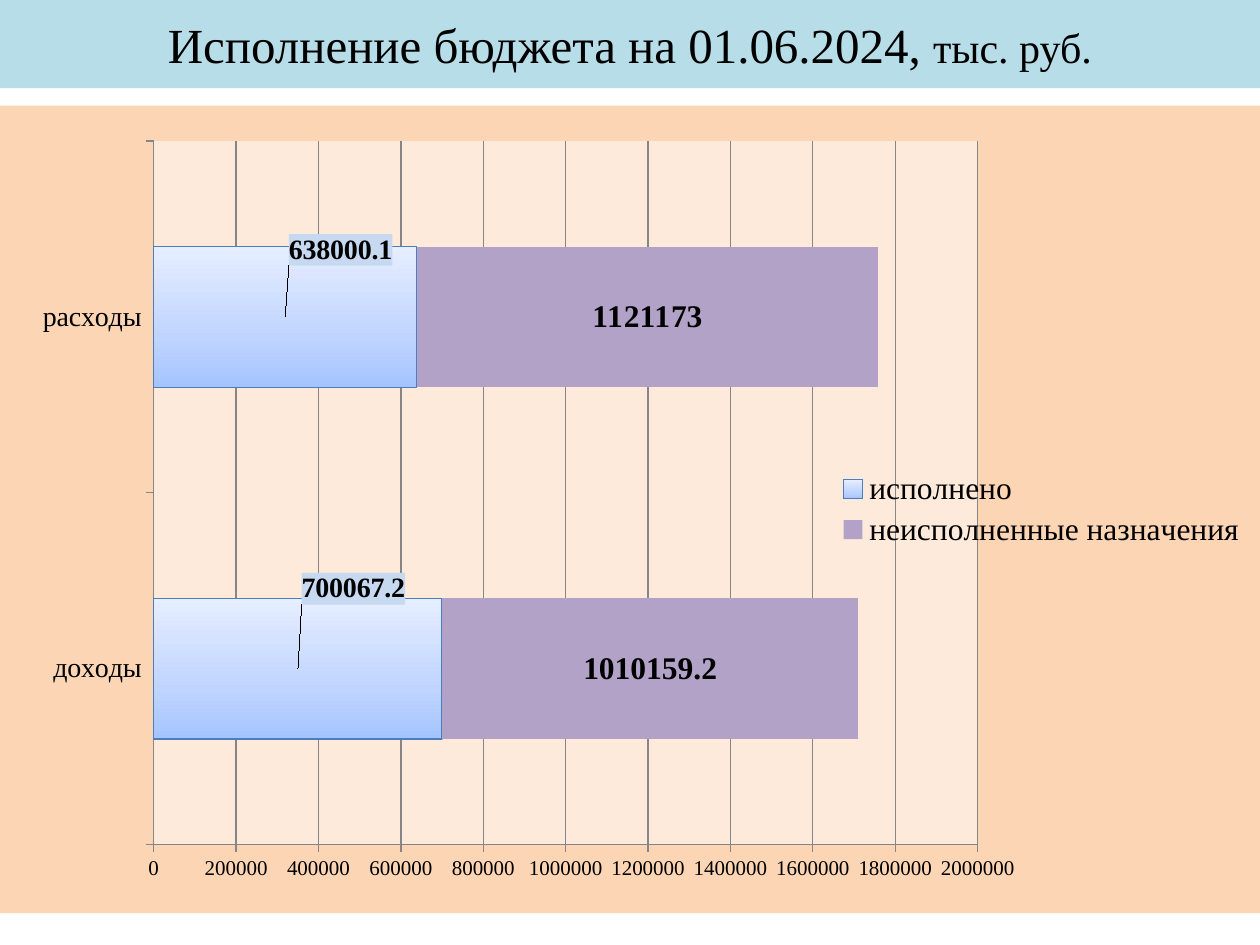
from lxml.etree import SubElement
from pptx import Presentation
from pptx.chart.data import CategoryChartData
from pptx.dml.color import RGBColor
from pptx.enum.chart import XL_CHART_TYPE, XL_LEGEND_POSITION, XL_TICK_MARK
from pptx.enum.shapes import MSO_SHAPE
from pptx.enum.text import MSO_ANCHOR, PP_ALIGN
from pptx.oxml import parse_xml
from pptx.oxml.ns import nsdecls, qn
from pptx.util import Cm, Pt

FONT = "Times New Roman"
TITLE = [("Исполнение бюджета на 01.06.2024, ", 28), ("тыс. руб.", 24)]
CATEGORIES = ["доходы", "расходы"]
SERIES = {
    "исполнено": [700067.2, 638000.1],
    "неисполненные назначения": [1010159.2, 1121173],
}
LABEL_SIZES = [16, 18]
LABEL_OFFSETS = [(0.044, -0.099), (0.044, -0.083)]
GRADIENT = [(0, "A4C4FF"), (35, "BFD4FF"), (100, "E6EEFF")]
PLOT_LAYOUT = {"x": 0.122, "y": 0.044, "w": 0.654, "h": 0.871}


def color(value):
    return RGBColor.from_string(value)


def set_font(font, size, bold=False):
    font.name = FONT
    font.size = Pt(size)
    font.bold = bold
    font.color.rgb = color("000000")


def solid_properties(value):
    return parse_xml(
        f'<c:spPr {nsdecls("c", "a")}><a:solidFill><a:srgbClr val="{value}"/>'
        "</a:solidFill><a:ln><a:noFill/></a:ln></c:spPr>"
    )


def manual_layout(settings):
    layout = parse_xml(f'<c:layout {nsdecls("c")}><c:manualLayout/></c:layout>')
    for name, value in settings.items():
        SubElement(layout[0], qn(f"c:{name}")).set("val", str(value))
    return layout


def gradient_fill(stops, angle):
    stop_list = "".join(
        f'<a:gs pos="{position * 1000}"><a:srgbClr val="{value}"/></a:gs>'
        for position, value in stops
    )
    return parse_xml(
        f'<a:gradFill {nsdecls("a")}><a:gsLst>{stop_list}</a:gsLst>'
        f'<a:lin ang="{angle * 60000}" scaled="0"/></a:gradFill>'
    )


def add_title(slide):
    shape = slide.shapes.add_shape(MSO_SHAPE.RECTANGLE, 0, 0, Cm(25.4), Cm(1.78))
    shape.shadow.inherit = False
    shape.fill.solid()
    shape.fill.fore_color.rgb = color("B7DEE8")
    shape.line.fill.background()
    shape.text_frame.word_wrap = True
    shape.text_frame.vertical_anchor = MSO_ANCHOR.MIDDLE
    paragraph = shape.text_frame.paragraphs[0]
    paragraph.alignment = PP_ALIGN.CENTER
    for text, size in TITLE:
        run = paragraph.add_run()
        run.text = text
        set_font(run.font, size)


def style_axes(chart):
    for axis, size in ((chart.category_axis, 16), (chart.value_axis, 12)):
        set_font(axis.tick_labels.font, size)
        axis.major_tick_mark = XL_TICK_MARK.OUTSIDE
        axis.minor_tick_mark = XL_TICK_MARK.NONE
        axis.format.line.color.rgb = color("868686")
    axis = chart.value_axis
    axis.minimum_scale, axis.maximum_scale = 0, 2000000
    axis.major_unit = 200000
    axis.has_major_gridlines = True
    axis.major_gridlines.format.line.color.rgb = color("868686")


def style_series(plot):
    for series, size in zip(plot.series, LABEL_SIZES):
        series.data_labels.show_value = True
        set_font(series.data_labels.font, size, bold=True)
    completed, remaining = plot.series
    remaining.format.fill.solid()
    remaining.format.fill.fore_color.rgb = color("B3A2C7")
    completed.format.line.color.rgb = color("4B7EBC")
    completed.format.line.width = Pt(0.75)
    completed._element.find(qn("c:spPr")).insert(0, gradient_fill(GRADIENT, 270))
    for index, (x, y) in enumerate(LABEL_OFFSETS):
        set_font(completed.points[index].data_label.font, LABEL_SIZES[0], bold=True)
    labels = completed._element.findall(".//" + qn("c:dLbl"))
    for label, (x, y) in zip(labels, LABEL_OFFSETS):
        label.find(qn("c:idx")).addnext(manual_layout({"x": x, "y": y}))
        label.find(qn("c:txPr")).addprevious(solid_properties("C6D9F1"))


def add_budget_chart(slide):
    data = CategoryChartData()
    data.categories = CATEGORIES
    for name, values in SERIES.items():
        data.add_series(name, values)
    chart = slide.shapes.add_chart(
        XL_CHART_TYPE.BAR_STACKED, 0, Cm(2.13), Cm(25.4), Cm(16.28), data
    ).chart
    chart.has_title = False
    chart.font.name = "Calibri"
    chart.font.size = Pt(18)
    chart.font.color.rgb = color("000000")
    chart.has_legend = True
    chart.legend.position = XL_LEGEND_POSITION.RIGHT
    chart.legend.include_in_layout = False
    set_font(chart.legend.font, 18)
    plot = chart.plots[0]
    plot.gap_width = 150
    plot.overlap = 100
    plot.vary_by_categories = False
    style_axes(chart)
    style_series(plot)

    chart_space = chart._chartSpace
    chart_space.find(qn("c:chart")).addnext(solid_properties("FCD5B5"))
    plot_area = chart_space.find(".//" + qn("c:plotArea"))
    for layout in plot_area.findall(qn("c:layout")):
        plot_area.remove(layout)
    modes = {"layoutTarget": "inner", "xMode": "edge", "yMode": "edge"}
    plot_area.insert(0, manual_layout({**modes, **PLOT_LAYOUT}))
    plot_area.append(solid_properties("FDEADA"))


def main():
    presentation = Presentation()
    presentation.slide_width = Cm(25.4)
    presentation.slide_height = Cm(19.05)
    slide = presentation.slides.add_slide(presentation.slide_layouts[6])
    add_title(slide)
    add_budget_chart(slide)
    presentation.save("out.pptx")


if __name__ == "__main__":
    main()
